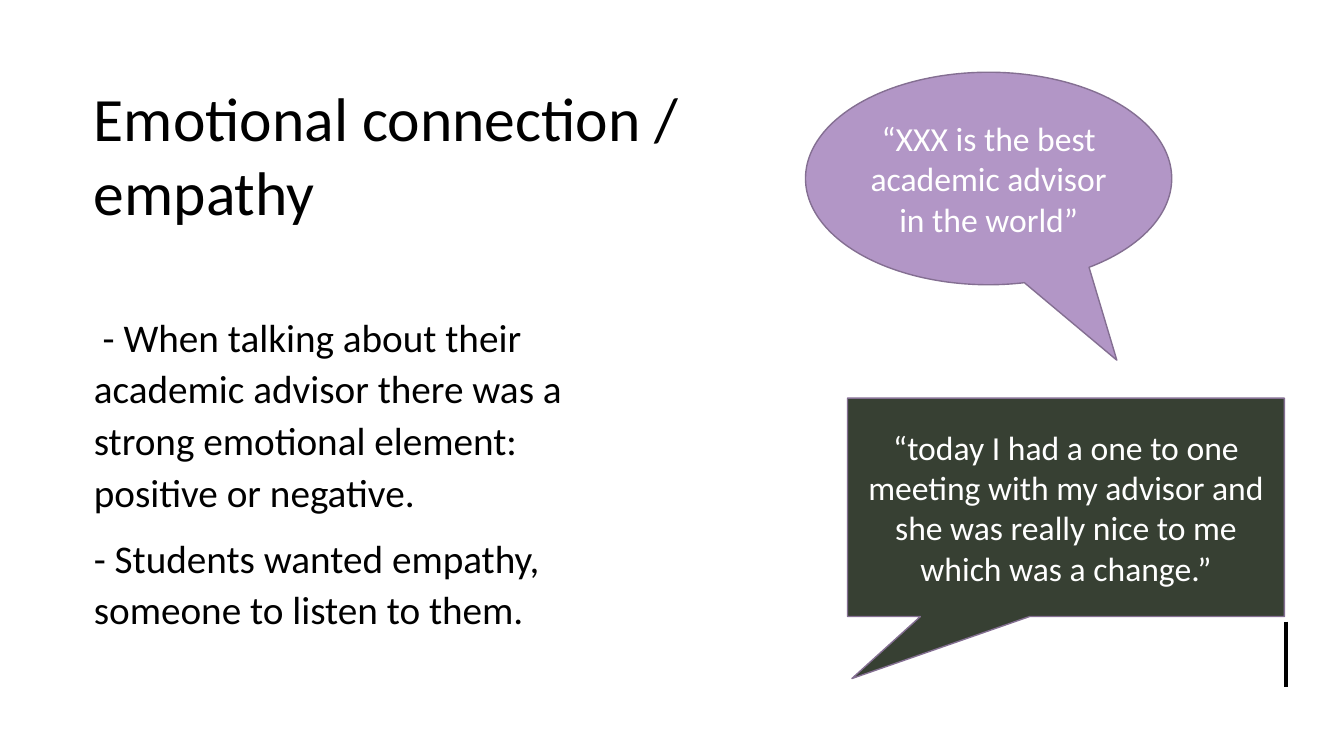
from lxml.etree import SubElement
from pptx import Presentation
from pptx.dml.color import RGBColor
from pptx.enum.shapes import MSO_CONNECTOR, MSO_SHAPE
from pptx.enum.text import MSO_ANCHOR, PP_ALIGN
from pptx.oxml.ns import qn
from pptx.util import Inches, Pt

BLACK = RGBColor(0x00, 0x00, 0x00)
WHITE = RGBColor(0xFF, 0xFF, 0xFF)
LILAC = RGBColor(0xB2, 0x96, 0xC6)
FOREST = RGBColor(0x37, 0x40, 0x33)
PLUM = RGBColor(0x84, 0x6F, 0x92)


def write(frame, *paragraphs, size, color=BLACK, align=PP_ALIGN.LEFT,
          anchor=MSO_ANCHOR.TOP, spacing=1.0, before=0, font="Calibri"):
    frame.word_wrap = True
    frame.vertical_anchor = anchor
    for index, words in enumerate(paragraphs):
        paragraph = frame.add_paragraph() if index else frame.paragraphs[0]
        paragraph.alignment = align
        paragraph.line_spacing = spacing
        paragraph.space_before = Pt(before)
        run = paragraph.add_run()
        run.text = words
        run.font.name = font
        run.font.size = Pt(size)
        run.font.color.rgb = color


class QuoteSlide:
    """Draws on one blank slide, measured on a grid of 160 columns by 90 rows."""

    def __init__(self, deck):
        self.column = deck.slide_width / 160
        self.row = deck.slide_height / 90
        self.slide = deck.slides.add_slide(deck.slide_layouts[6])
        self.slide.background.fill.solid()
        self.slide.background.fill.fore_color.rgb = WHITE

    def place(self, x, y, across, down):
        return (round(x * self.column), round(y * self.row),
                round(across * self.column), round(down * self.row))

    def text(self, area, *paragraphs, **style):
        box = self.slide.shapes.add_textbox(*self.place(*area))
        write(box.text_frame, *paragraphs, **style)

    def callout(self, preset, area, tip, fill, quote):
        bubble = self.slide.shapes.add_shape(preset, *self.place(*area))
        bubble.shadow.inherit = False
        bubble.adjustments[0], bubble.adjustments[1] = tip
        bubble.fill.solid()
        bubble.fill.fore_color.rgb = fill
        bubble.line.color.rgb = PLUM
        bubble.line.width = Pt(1)
        write(bubble.text_frame, quote, size=24, color=WHITE,
              align=PP_ALIGN.CENTER, anchor=MSO_ANCHOR.MIDDLE)

    def rule(self, start, end):
        stroke = self.slide.shapes.add_connector(
            MSO_CONNECTOR.STRAIGHT, *self.place(*start, *end))
        stroke.line.color.rgb = BLACK
        stroke.line.width = Pt(3)
        SubElement(stroke._element.spPr, qn("a:effectLst"))


def main():
    deck = Presentation()
    deck.slide_width, deck.slide_height = Inches(13.33), Inches(7.5)
    empathy = QuoteSlide(deck)
    empathy.rule((153.1, 74), (153.1, 81.8))
    empathy.text((10, 6, 84.7, 24.6), "Emotional connection / empathy",
                 size=44, anchor=MSO_ANCHOR.MIDDLE)
    empathy.text(
        (10, 36.1, 60.6, 46.3),
        " - When talking about their academic advisor there was a strong "
        "emotional element: positive or negative.",
        "- Students wanted empathy, someone to listen to them.",
        size=28, spacing=1.1, before=10)
    empathy.callout(
        MSO_SHAPE.OVAL_CALLOUT, (95.9, 8.6, 43.6, 25.3), (0.35, 0.855), LILAC,
        "“XXX is the best academic advisor in the world”")
    empathy.callout(
        MSO_SHAPE.RECTANGULAR_CALLOUT, (100.9, 47.4, 52, 26), (-0.49, 0.784), FOREST,
        "“today I had a one to one meeting with my advisor and she was "
        "really nice to me which was a change.”")
    deck.save("out.pptx")


if __name__ == "__main__":
    main()
